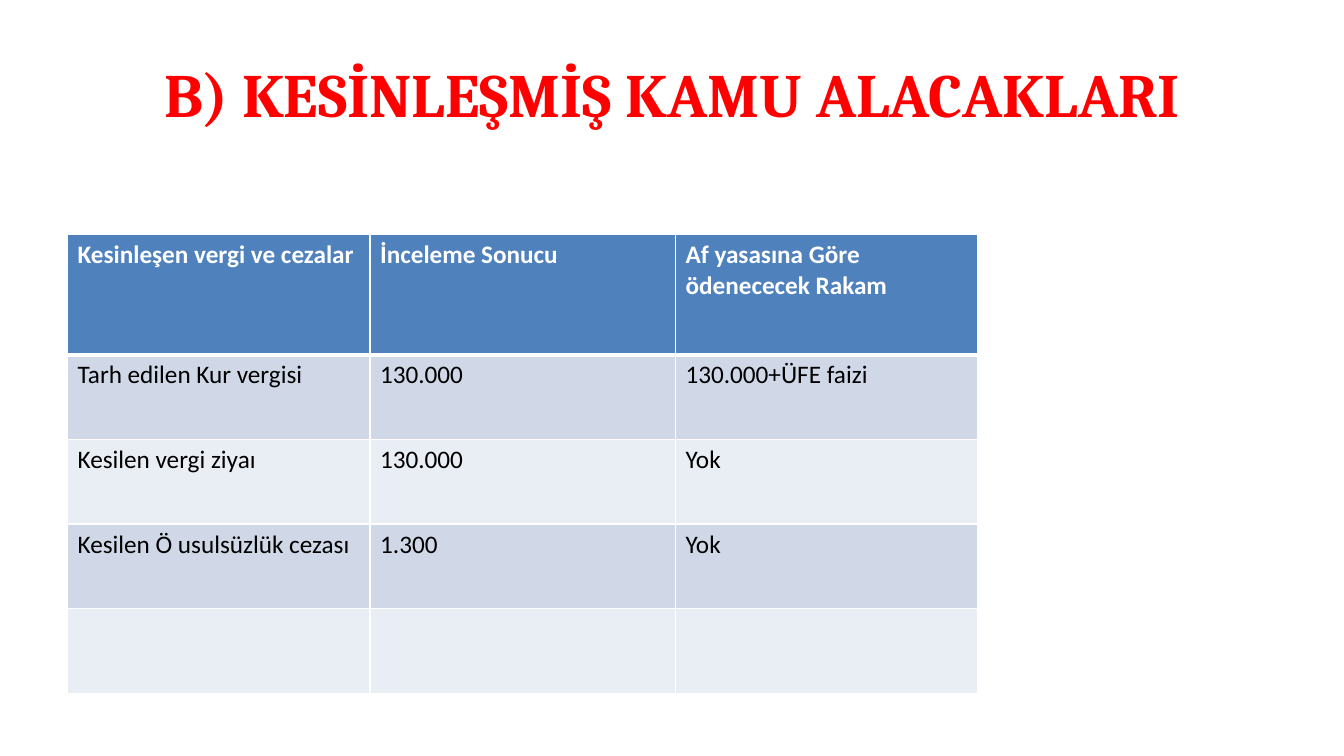
from dataclasses import dataclass

from lxml import etree
from pptx import Presentation
from pptx.dml.color import RGBColor
from pptx.enum.text import MSO_ANCHOR, PP_ALIGN
from pptx.oxml.ns import qn
from pptx.util import Inches, Pt

CENTER = PP_ALIGN.CENTER
MIDDLE = MSO_ANCHOR.MIDDLE

RED = RGBColor(0xFF, 0x00, 0x00)
WHITE = RGBColor(0xFF, 0xFF, 0xFF)
BLACK = RGBColor(0x00, 0x00, 0x00)
HEADER_BLUE = RGBColor(0x4F, 0x81, 0xBD)
BAND_DARK = RGBColor(0xD0, 0xD8, 0xE8)
BAND_LIGHT = RGBColor(0xE9, 0xED, 0xF4)

COLUMN_WIDTHS = (3, 3.03, 3)
THIN, THICK = 1, 3


@dataclass(frozen=True)
class TableRow:
    texts: tuple[str, str, str]
    fill: RGBColor
    height: float = 0.84
    color: RGBColor = BLACK
    bold: bool = False
    top_border: float = THIN
    bottom_border: float = THIN


ROWS = (
    TableRow(
        ("Kesinleşen vergi ve cezalar", "İnceleme Sonucu", "Af yasasına Göre ödenececek Rakam"),
        HEADER_BLUE, height=1.19, color=WHITE, bold=True, bottom_border=THICK,
    ),
    TableRow(("Tarh edilen Kur vergisi", "130.000", "130.000+ÜFE faizi"), BAND_DARK, top_border=THICK),
    TableRow(("Kesilen vergi ziyaı", "130.000", "Yok"), BAND_LIGHT),
    TableRow(("Kesilen Ö usulsüzlük cezası", "1.300", "Yok"), BAND_DARK),
    TableRow(("", "", ""), BAND_LIGHT),
)


def style_paragraph(paragraph, font_name: str, size: float, color: RGBColor, bold: bool) -> None:
    font = paragraph.font
    font.name = font_name
    font.size = Pt(size)
    font.color.rgb = color
    font.bold = bold


def set_borders(cell, top: float, bottom: float) -> None:
    properties = cell._tc.get_or_add_tcPr()
    for side, width in (("L", THIN), ("R", THIN), ("T", top), ("B", bottom)):
        line = etree.SubElement(properties, qn(f"a:ln{side}"), w=str(Pt(width)))
        fill = etree.SubElement(line, qn("a:solidFill"))
        etree.SubElement(fill, qn("a:srgbClr"), val=str(WHITE))


def add_title(slide, text: str) -> None:
    shape = slide.shapes.add_textbox(Inches(0.67), Inches(0.3), Inches(12), Inches(1.25))
    frame = shape.text_frame
    frame.word_wrap = True
    frame.vertical_anchor = MIDDLE
    paragraph = frame.paragraphs[0]
    paragraph.text = text
    paragraph.alignment = CENTER
    style_paragraph(paragraph, "Cambria", 44, RED, True)


def add_debt_table(slide, rows: tuple[TableRow, ...]) -> None:
    shape = slide.shapes.add_table(
        len(rows), len(COLUMN_WIDTHS), Inches(0.67), Inches(2.33),
        Inches(sum(COLUMN_WIDTHS)), Inches(sum(row.height for row in rows)),
    )
    table = shape.table
    for column, width in zip(table.columns, COLUMN_WIDTHS):
        column.width = Inches(width)
    for row_index, row in enumerate(rows):
        table.rows[row_index].height = Inches(row.height)
        for column_index, text in enumerate(row.texts):
            cell = table.cell(row_index, column_index)
            # Borders come before the fill in the cell properties
            set_borders(cell, row.top_border, row.bottom_border)
            cell.fill.solid()
            cell.fill.fore_color.rgb = row.fill
            cell.text = text
            style_paragraph(cell.text_frame.paragraphs[0], "Calibri", 18, row.color, row.bold)


def main() -> None:
    presentation = Presentation()
    presentation.slide_width = Inches(13.33)
    presentation.slide_height = Inches(7.5)
    slide = presentation.slides.add_slide(presentation.slide_layouts[6])

    # Title
    add_title(slide, "B) KESİNLEŞMİŞ KAMU ALACAKLARI")

    # Table of assessed taxes and penalties
    add_debt_table(slide, ROWS)

    presentation.save("out.pptx")


if __name__ == "__main__":
    main()
